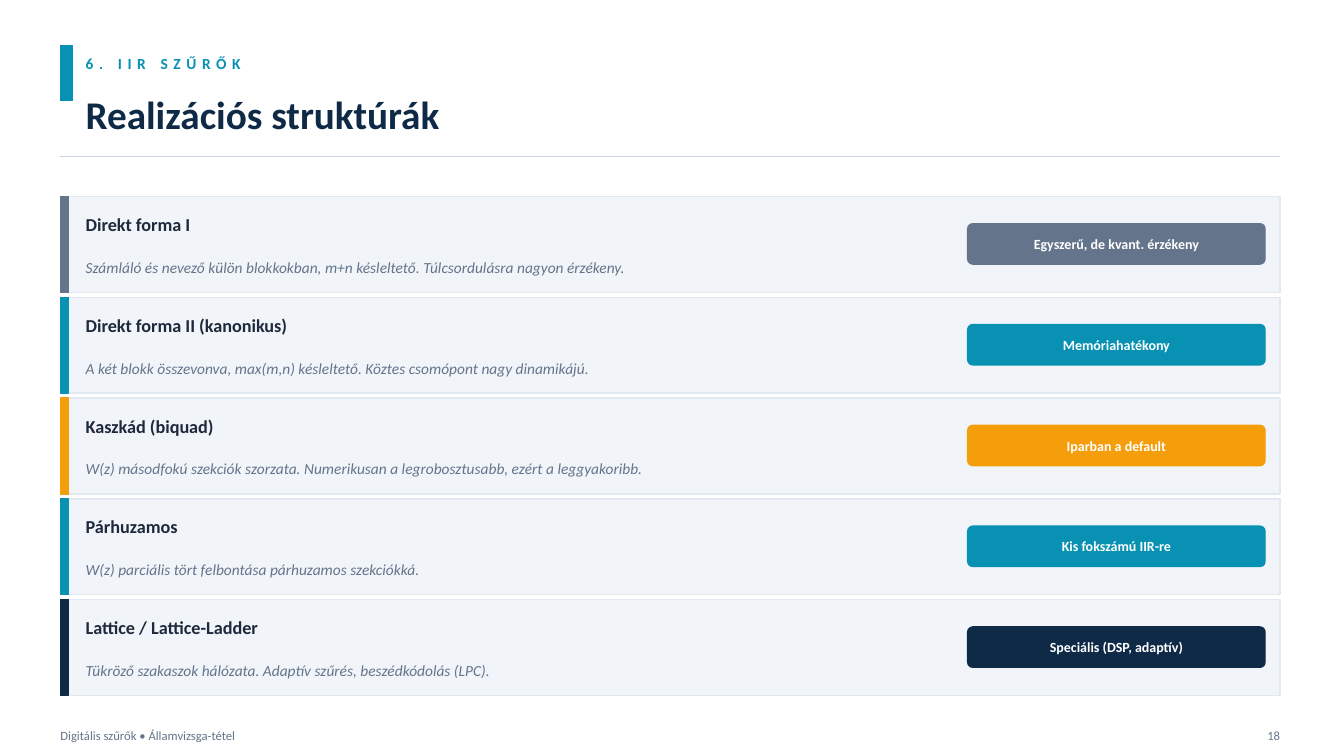
from pptx import Presentation
from pptx.dml.color import RGBColor
from pptx.enum.shapes import MSO_CONNECTOR, MSO_SHAPE
from pptx.enum.text import MSO_ANCHOR, PP_ALIGN
from pptx.oxml.ns import qn
from pptx.util import Pt
from lxml.etree import SubElement

NAVY, TEAL, AMBER, SLATE = "0F2A47", "0891B2", "F59E0B", "64748B"
INK, PALE, EDGE, RULE, WHITE = "1E293B", "F1F5F9", "E2E8F0", "CBD5E1", "FFFFFF"

SECTION = "6. IIR SZŰRŐK"
TITLE = "Realizációs struktúrák"
FOOTER = "Digitális szűrők • Államvizsga-tétel"
NUMBER = "18"
FORMS = [
    ("Direkt forma I",
     "Számláló és nevező külön blokkokban, m+n késleltető. Túlcsordulásra nagyon érzékeny.",
     "Egyszerű, de kvant. érzékeny", SLATE),
    ("Direkt forma II (kanonikus)",
     "A két blokk összevonva, max(m,n) késleltető. Köztes csomópont nagy dinamikájú.",
     "Memóriahatékony", TEAL),
    ("Kaszkád (biquad)",
     "W(z) másodfokú szekciók szorzata. Numerikusan a legrobosztusabb, ezért a leggyakoribb.",
     "Iparban a default", AMBER),
    ("Párhuzamos",
     "W(z) parciális tört felbontása párhuzamos szekciókká.",
     "Kis fokszámú IIR-re", TEAL),
    ("Lattice / Lattice-Ladder",
     "Tükröző szakaszok hálózata. Adaptív szűrés, beszédkódolás (LPC).",
     "Speciális (DSP, adaptív)", NAVY),
]

STYLES = {
    "section": ({"size": Pt(11), "bold": True}, TEAL),
    "title": ({"size": Pt(28), "bold": True}, NAVY),
    "name": ({"size": Pt(13), "bold": True}, INK),
    "detail": ({"size": Pt(11), "italic": True}, SLATE),
    "badge": ({"size": Pt(10), "bold": True}, WHITE),
    "footer": ({"size": Pt(9)}, SLATE),
}
FRAME = {"word_wrap": True, "vertical_anchor": MSO_ANCHOR.MIDDLE,
         "margin_left": 0, "margin_top": 0, "margin_right": 0, "margin_bottom": 0}

LEFT, WIDTH, INDENT = 43.2, 871.2, 61.2
RIGHT = LEFT + WIDTH
TOP, STEP, HEIGHT = 140.4, 72, 68.4


def color(code):
    return RGBColor.from_string(code)


def apply(target, values):
    for key, value in values.items():
        setattr(target, key, value)


def write(shape, text, style, align=PP_ALIGN.LEFT):
    frame = shape.text_frame
    apply(frame, FRAME)
    para = frame.paragraphs[0]
    para.alignment = align
    run = para.add_run()
    run.text = text
    values, code = STYLES[style]
    apply(run.font, {"name": "Calibri", **values})
    run.font.color.rgb = color(code)
    return run


def label(slide, box, text, style, align=PP_ALIGN.LEFT):
    return write(slide.shapes.add_textbox(*map(Pt, box)), text, style, align)


def block(slide, box, fill, line, kind=MSO_SHAPE.RECTANGLE):
    shape = slide.shapes.add_shape(kind, *map(Pt, box))
    shape.shadow.inherit = False
    shape.fill.solid()
    shape.fill.fore_color.rgb = color(fill)
    shape.line.color.rgb = color(line)
    shape.line.width = Pt(1)
    return shape


def header(slide):
    block(slide, (LEFT, 32.4, 8.64, 39.6), TEAL, TEAL)
    run = label(slide, (INDENT, 32.4, 576, 25.2), SECTION, "section")
    run._r.get_or_add_rPr().set("spc", "400")
    label(slide, (INDENT, 56.16, 864, 50.4), TITLE, "title")
    rule = slide.shapes.add_connector(
        MSO_CONNECTOR.STRAIGHT, *map(Pt, (LEFT, 111.6, RIGHT, 111.6)))
    rule.line.color.rgb = color(RULE)
    rule.line.width = Pt(0.75)
    SubElement(rule._element.spPr, qn("a:effectLst"))


def card(slide, top, name, detail, badge, tint):
    block(slide, (LEFT, top, WIDTH, HEIGHT), PALE, EDGE)
    block(slide, (LEFT, top, 5.76, HEIGHT), tint, tint)
    label(slide, (INDENT, top + 7.2, 288, 25.2), name, "name")
    label(slide, (INDENT, top + 32.4, 612, 36), detail, "detail")
    pill = block(slide, (691.2, top + 19.44, 212.4, 28.8), tint, tint,
                 MSO_SHAPE.ROUNDED_RECTANGLE)
    pill.adjustments[0] = 0.125
    write(pill, badge, "badge", PP_ALIGN.CENTER)


def main():
    deck = Presentation()
    apply(deck, {"slide_width": Pt(960), "slide_height": Pt(540)})
    slide = deck.slides.add_slide(deck.slide_layouts[6])
    header(slide)
    for index, form in enumerate(FORMS):
        card(slide, TOP + index * STEP, *form)
    label(slide, (LEFT, 514.8, 576, 21.6), FOOTER, "footer")
    label(slide, (RIGHT - 21.6, 514.8, 21.6, 21.6), NUMBER, "footer", PP_ALIGN.RIGHT)
    deck.save("out.pptx")


if __name__ == "__main__":
    main()
